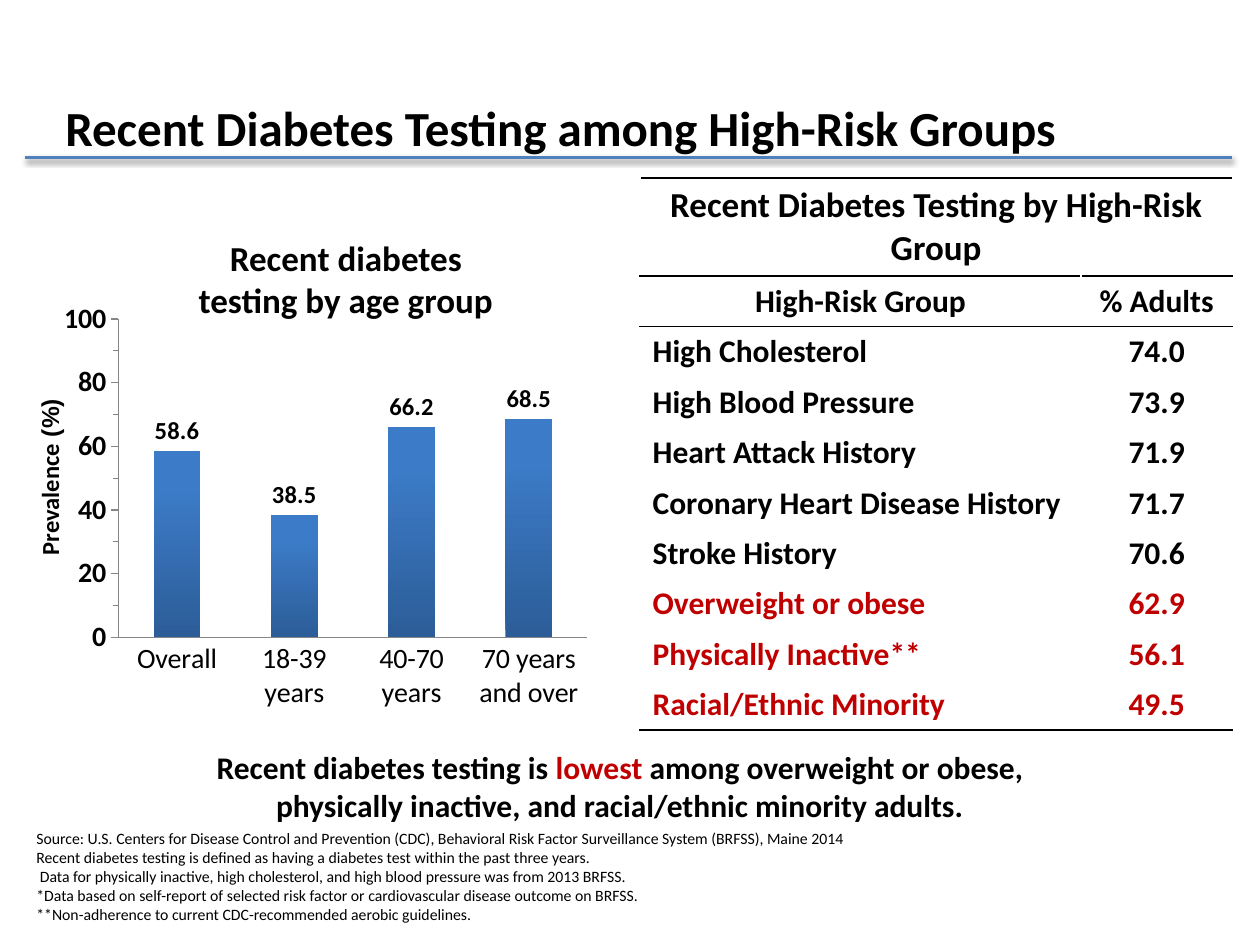
from lxml import etree
from pptx import Presentation
from pptx.chart.data import CategoryChartData
from pptx.dml.color import RGBColor
from pptx.enum.chart import XL_CHART_TYPE, XL_LABEL_POSITION, XL_TICK_MARK
from pptx.enum.shapes import MSO_CONNECTOR
from pptx.enum.text import MSO_ANCHOR, PP_ALIGN
from pptx.oxml import parse_xml
from pptx.oxml.ns import nsdecls, qn
from pptx.util import Inches, Pt

CLUSTERED = XL_CHART_TYPE.COLUMN_CLUSTERED
OUTSIDE_END = XL_LABEL_POSITION.OUTSIDE_END
TICK_NONE, TICK_OUT = XL_TICK_MARK.NONE, XL_TICK_MARK.OUTSIDE
STRAIGHT = MSO_CONNECTOR.STRAIGHT
MIDDLE, TOP = MSO_ANCHOR.MIDDLE, MSO_ANCHOR.TOP
LEFT, CENTER = PP_ALIGN.LEFT, PP_ALIGN.CENTER

BLACK = RGBColor(0x00, 0x00, 0x00)
WHITE = RGBColor(0xFF, 0xFF, 0xFF)
RED = RGBColor(0xC0, 0x00, 0x00)
BLUE = RGBColor(0x4F, 0x81, 0xBD)
BAR_DARK = RGBColor(0x2C, 0x5D, 0x98)
BAR_LIGHT = RGBColor(0x3C, 0x7B, 0xC7)
AXIS_GRAY = RGBColor(0x86, 0x86, 0x86)

AGE_GROUPS = ["Overall", "18-39 years", "40-70 years", "70 years and over"]
AGE_RATES = [58.6, 38.5, 66.2, 68.5]
RISK_ROWS = [
    ("High Cholesterol", "74.0", BLACK),
    ("High Blood Pressure", "73.9", BLACK),
    ("Heart Attack History", "71.9", BLACK),
    ("Coronary Heart Disease History", "71.7", BLACK),
    ("Stroke History", "70.6", BLACK),
    ("Overweight or obese", "62.9", RED),
    ("Physically Inactive**", "56.1", RED),
    ("Racial/Ethnic Minority", "49.5", RED),
]
FOOTNOTES = [
    "Source: U.S. Centers for Disease Control and Prevention (CDC), Behavioral Risk Factor "
    "Surveillance System (BRFSS), Maine 2014",
    "Recent diabetes testing is defined as having a diabetes test within the past three years.",
    " Data for physically inactive, high cholesterol, and high blood pressure was from 2013 BRFSS.",
    "*Data based on self-report of selected risk factor or cardiovascular disease outcome on BRFSS.",
    "**Non-adherence to current CDC-recommended aerobic guidelines.",
]


def style_font(font, size, color=BLACK, bold=True, name="Calibri"):
    font.name = name
    font.size = Pt(size)
    font.bold = bold
    font.color.rgb = color


def add_text(slide, box, paragraphs, size, align=LEFT, anchor=TOP, bold=True):
    textbox = slide.shapes.add_textbox(*map(Inches, box))
    frame = textbox.text_frame
    frame.word_wrap = True
    frame.vertical_anchor = anchor
    for index, pieces in enumerate(paragraphs):
        paragraph = frame.paragraphs[0] if index == 0 else frame.add_paragraph()
        paragraph.alignment = align
        for text, color, font_name in pieces:
            run = paragraph.add_run()
            run.text = text
            style_font(run.font, size, color, bold, font_name)
    return textbox


def add_heading(slide, box):
    left, top, width, height = box
    title = [("Recent Diabetes Testing among High-Risk Groups", BLACK, "Calibri")]
    add_text(slide, (left + 0.22, top, 9, height), [title], 28, anchor=MIDDLE)
    rule_y = Inches(top + 0.58)
    rule = slide.shapes.add_connector(
        STRAIGHT, Inches(left), rule_y, Inches(left + width), rule_y)
    rule.line.color.rgb = BLUE
    rule.line.width = Pt(2)
    rule._element.spPr.append(parse_xml(
        f'<a:effectLst {nsdecls("a")}><a:outerShdw blurRad="{Pt(3.1)}" dist="{Pt(1.6)}" '
        'dir="5400000" rotWithShape="0"><a:srgbClr val="000000"><a:alpha val="38000"/>'
        '</a:srgbClr></a:outerShdw></a:effectLst>'))


def set_plot_layout(chart, x, y, w, h):
    plot_area = chart._chartSpace.chart.plotArea
    for old_layout in plot_area.findall(qn("c:layout")):
        plot_area.remove(old_layout)
    layout = parse_xml(f'<c:layout {nsdecls("c")}><c:manualLayout/></c:layout>')
    settings = [("layoutTarget", "inner"), ("xMode", "edge"), ("yMode", "edge"),
                ("x", x), ("y", y), ("w", w), ("h", h)]
    for tag, value in settings:
        etree.SubElement(layout[0], qn(f"c:{tag}")).set("val", str(value))
    plot_area.insert(0, layout)


def style_axes(chart):
    ages, prevalence = chart.category_axis, chart.value_axis
    for axis, bold in ((ages, False), (prevalence, True)):
        style_font(axis.tick_labels.font, 16, bold=bold)
        axis.format.line.color.rgb = AXIS_GRAY
        axis.has_major_gridlines = False
    ages.major_tick_mark = TICK_NONE
    prevalence.major_tick_mark = prevalence.minor_tick_mark = TICK_OUT
    prevalence.minimum_scale, prevalence.maximum_scale = 0, 100
    prevalence.major_unit, prevalence.minor_unit = 20, 10
    prevalence.tick_labels.number_format = "0"
    prevalence.tick_labels.number_format_is_linked = False


def add_age_chart(slide, box):
    left, top, width, height = box
    age_data = CategoryChartData(number_format="0.0")
    age_data.categories = AGE_GROUPS
    age_data.add_series("Series 1", AGE_RATES)
    chart = slide.shapes.add_chart(CLUSTERED, *map(Inches, box), age_data).chart
    chart.has_title = False
    chart.has_legend = False
    style_font(chart.font, 18)
    set_plot_layout(chart, 0.12, 0.06, 0.86, 0.75)
    style_axes(chart)

    plot = chart.plots[0]
    plot.gap_width = 150
    plot.vary_by_categories = False
    plot.has_data_labels = True
    labels = plot.data_labels
    labels.show_value = True
    labels.position = OUTSIDE_END
    labels.number_format = "0.0"
    labels.number_format_is_linked = False
    style_font(labels.font, 14)
    bar_fill = plot.series[0].format.fill
    bar_fill.gradient()
    bar_fill.gradient_angle = 90
    for stop, color, position in zip(bar_fill.gradient_stops, (BAR_DARK, BAR_LIGHT), (0, 0.8)):
        stop.color.rgb = color
        stop.position = position

    caption = [("Recent diabetes testing by age group", BLACK, "Calibri")]
    add_text(slide, (left + 0.91, top - 0.5, 2.83, 0.77), [caption], 20, CENTER)
    axis_title = [("Prevalence", BLACK, "Calibri"), (" (%)", BLACK, "Arial")]
    add_text(slide, (left - 0.86, top + 1.17, 1.67, 0.34), [axis_title], 14).rotation = 270


def set_border(cell, side, color, width):
    border = parse_xml(
        f'<a:{side} {nsdecls("a")} w="{Pt(width)}"><a:solidFill>'
        f'<a:srgbClr val="{color}"/></a:solidFill></a:{side}>')
    properties = cell._tc.get_or_add_tcPr()
    properties.insert(len(properties.findall("*")) - 1, border)


def fill_cell(cell, text, size, color, align, top_border, bottom_border):
    cell.text_frame.text = text
    cell.vertical_anchor = TOP
    paragraph = cell.text_frame.paragraphs[0]
    paragraph.alignment = align
    style_font(paragraph.font, size, color)
    for run in paragraph.runs:
        style_font(run.font, size, color)
    cell.fill.background()
    side_border = (WHITE, 1)
    for side, border in (("lnL", side_border), ("lnR", side_border),
                         ("lnT", top_border), ("lnB", bottom_border)):
        set_border(cell, side, *border)


def add_risk_table(slide, box):
    rows = [("Recent Diabetes Testing by High-Risk Group", "", BLACK),
            ("High-Risk Group", "% Adults", BLACK)] + RISK_ROWS
    heavy, thin, blank = (BLACK, 1.5), (BLACK, 1), (WHITE, 1)
    rules = [heavy, thin, thin] + [blank] * (len(rows) - 3) + [heavy]
    table = slide.shapes.add_table(len(rows), 2, *map(Inches, box)).table
    table.first_row = False
    table.horz_banding = False
    table.columns[0].width = Inches(3.5)
    table.columns[1].width = Inches(box[2] - 3.5)
    for index, (group, percent, color) in enumerate(rows):
        table.rows[index].height = Inches(0.78 if index == 0 else 0.4)
        size = 20 if index == 0 else 18
        group_align = CENTER if index < 2 else LEFT
        for column, (text, align) in enumerate(((group, group_align), (percent, CENTER))):
            fill_cell(table.cell(index, column), text, size, color, align,
                      rules[index], rules[index + 1])
    table.cell(0, 0).merge(table.cell(0, 1))


def add_conclusion(slide, box):
    finding = [
        ("Recent diabetes testing is ", BLACK, "Calibri"),
        ("lowest ", RED, "Calibri"),
        ("among overweight or obese, physically inactive, and racial/ethnic minority adults.",
         BLACK, "Calibri"),
    ]
    add_text(slide, box, [finding], 18, CENTER)


def add_footnotes(slide, box):
    notes = [[(note, BLACK, "Calibri")] for note in FOOTNOTES]
    add_text(slide, box, notes, 9, bold=False)


def main():
    presentation = Presentation()
    presentation.slide_width, presentation.slide_height = Inches(10), Inches(7.5)
    slide = presentation.slides.add_slide(presentation.slide_layouts[6])
    add_age_chart(slide, (0.42, 2.33, 4.33, 3.37))
    add_heading(slide, (0.2, 0.67, 9.58, 0.67))
    add_risk_table(slide, (5.08, 1.41, 4.7, 4.37))
    add_conclusion(slide, (1.13, 5.89, 7.58, 0.71))
    add_footnotes(slide, (0.19, 6.53, 8.64, 0.96))
    presentation.save("out.pptx")


if __name__ == "__main__":
    main()
